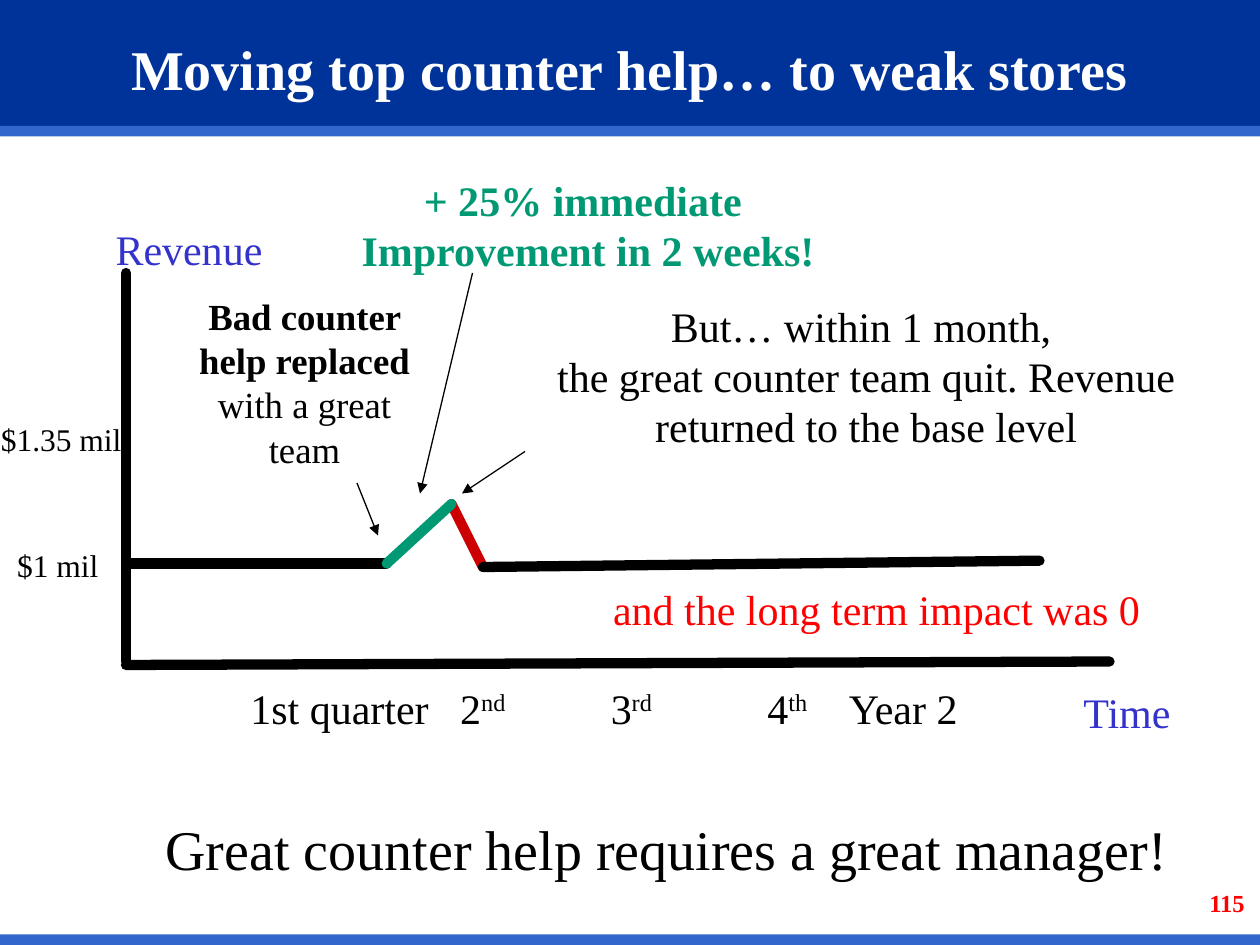
from lxml import etree
from pptx import Presentation
from pptx import util as u
from pptx.dml.color import RGBColor
from pptx.enum import shapes, text
from pptx.oxml import ns

FONT = "Times New Roman"
COLORS = {
    "navy": "003399", "blue": "3366CC", "label": "3333CC", "green": "009973",
    "dark red": "CC0000", "red": "FF0000", "black": "000000", "white": "FFFFFF",
}
ALIGN = text.PP_ALIGN
ANCHOR = text.MSO_ANCHOR

presentation = Presentation()
presentation.slide_width, presentation.slide_height = u.Pt(720), u.Pt(540)
slide = presentation.slides.add_slide(presentation.slide_layouts[6])


def add_text(content, left, top, width, height, size=24, color="black", bold=False,
             align=ALIGN.CENTER, anchor=ANCHOR.TOP, wrap=True, inset=(0, 0)):
    """Each line of content is a paragraph: a string or a list of (text, format) runs."""
    box = slide.shapes.add_textbox(u.Pt(left), u.Pt(top), u.Pt(width), u.Pt(height))
    frame = box.text_frame
    frame.word_wrap = wrap
    frame.vertical_anchor = anchor
    frame.margin_left = frame.margin_right = u.Pt(inset[0])
    frame.margin_top = frame.margin_bottom = u.Pt(inset[1])
    for index, line in enumerate(content):
        paragraph = frame.paragraphs[0] if index == 0 else frame.add_paragraph()
        paragraph.alignment = align
        for words, style in ([(line, {})] if isinstance(line, str) else line):
            run = paragraph.add_run()
            run.text = words
            run.font.name = FONT
            run.font.size = u.Pt(size)
            run.font.bold = style.get("bold", bold)
            run.font.color.rgb = RGBColor.from_string(COLORS[color])
            if "baseline" in style:
                run.font._element.set("baseline", style["baseline"])
    return frame


def add_line(start, end, color="black", width=5.88, arrow=False):
    points = [u.Pt(value) for value in (*start, *end)]
    line = slide.shapes.add_connector(shapes.MSO_CONNECTOR.STRAIGHT, *points)
    line.line.color.rgb = RGBColor.from_string(COLORS[color])
    line.line.width = u.Pt(width)
    outline = line.line._get_or_add_ln()
    if arrow:
        etree.SubElement(outline, ns.qn("a:tailEnd"), type="triangle")
    else:
        outline.set("cap", "rnd")
        etree.SubElement(outline, ns.qn("a:round"))
    etree.SubElement(line._element.spPr, ns.qn("a:effectLst"))


# Header and footer bands
for top, height, color in [(0, 72, "navy"), (72, 6, "blue"), (534, 6, "blue")]:
    band = slide.shapes.add_shape(shapes.MSO_SHAPE.RECTANGLE,
                                  0, u.Pt(top), u.Pt(720), u.Pt(height))
    band.shadow.inherit = False
    band.fill.solid()
    band.fill.fore_color.rgb = RGBColor.from_string(COLORS[color])
    band.line.fill.background()

# Title, conclusion and page number
padding = (7.2, 3.6)
add_text(["Moving top counter help… to weak stores"], 0, 24, 720, 30,
         size=32, color="white", bold=True, anchor=ANCHOR.MIDDLE)
add_text(["Great counter help requires a great manager!"], 42, 462, 678, 46,
         size=32, inset=padding)
add_text(["115"], 684, 504, 36, 24, size=14, color="red", bold=True,
         align=ALIGN.LEFT, wrap=False, inset=padding)

# Axes
add_line((72, 156), (72, 378))
add_line((72, 380), (634, 378))

# Revenue over time
peak, rise_start, fall_end = (258, 288), (221, 322), (276, 324)
add_line((74, 322), rise_start)
add_line(peak, fall_end, color="dark red")
add_line(peak, rise_start, color="green")
add_line(fall_end, (594, 320.4))

# Axis labels
add_text(["Revenue"], 66, 127.5, 84, 29, color="label", wrap=False)
add_text(["Time"], 619, 392.5, 50, 29, color="label", wrap=False)
add_text(["$1.35 mil"], 0.5, 240, 69, 22, size=18, wrap=False)
add_text(["$1 mil"], 9, 312, 48, 22, size=18, wrap=False)

# Quarters, set on tab stops
raised = {"baseline": "30000"}
quarters = add_text(
    [[("1st quarter\t2", {}), ("nd", raised), ("\t3", {}), ("rd", raised),
      ("\t4", {}), ("th", raised), ("\tYear 2", {})]],
    143, 390, 475, 29, align=ALIGN.LEFT)
tab_list = etree.SubElement(quarters.paragraphs[0]._p.get_or_add_pPr(), ns.qn("a:tabLst"))
for stop in (120, 206, 295.5, 342):
    etree.SubElement(tab_list, ns.qn("a:tab"), pos=str(u.Pt(stop)), algn="l")

# Comments
add_text([[("Bad counter help replaced", {"bold": True}), (" with a great team", {})]],
         108, 168, 132, 102, size=21)
add_text(["But… within 1 month, ",
          "the great counter team quit. Revenue returned to the base level"],
         270, 168, 450, 100, inset=padding)
add_text(["and the long term impact was 0"], 342, 330, 318, 37,
         color="red", wrap=False, inset=padding)
add_text(["+ 25% immediate ", "Improvement in 2 weeks!"], 198, 96, 276, 66,
         color="green", bold=True, wrap=False, inset=padding)

# Arrows from the comments to the curve
for start, end in [((204, 276), (216, 306)),
                   ((300, 258), (264, 282)),
                   ((270, 156), (240, 282))]:
    add_line(start, end, width=0.75, arrow=True)

presentation.save("out.pptx")
